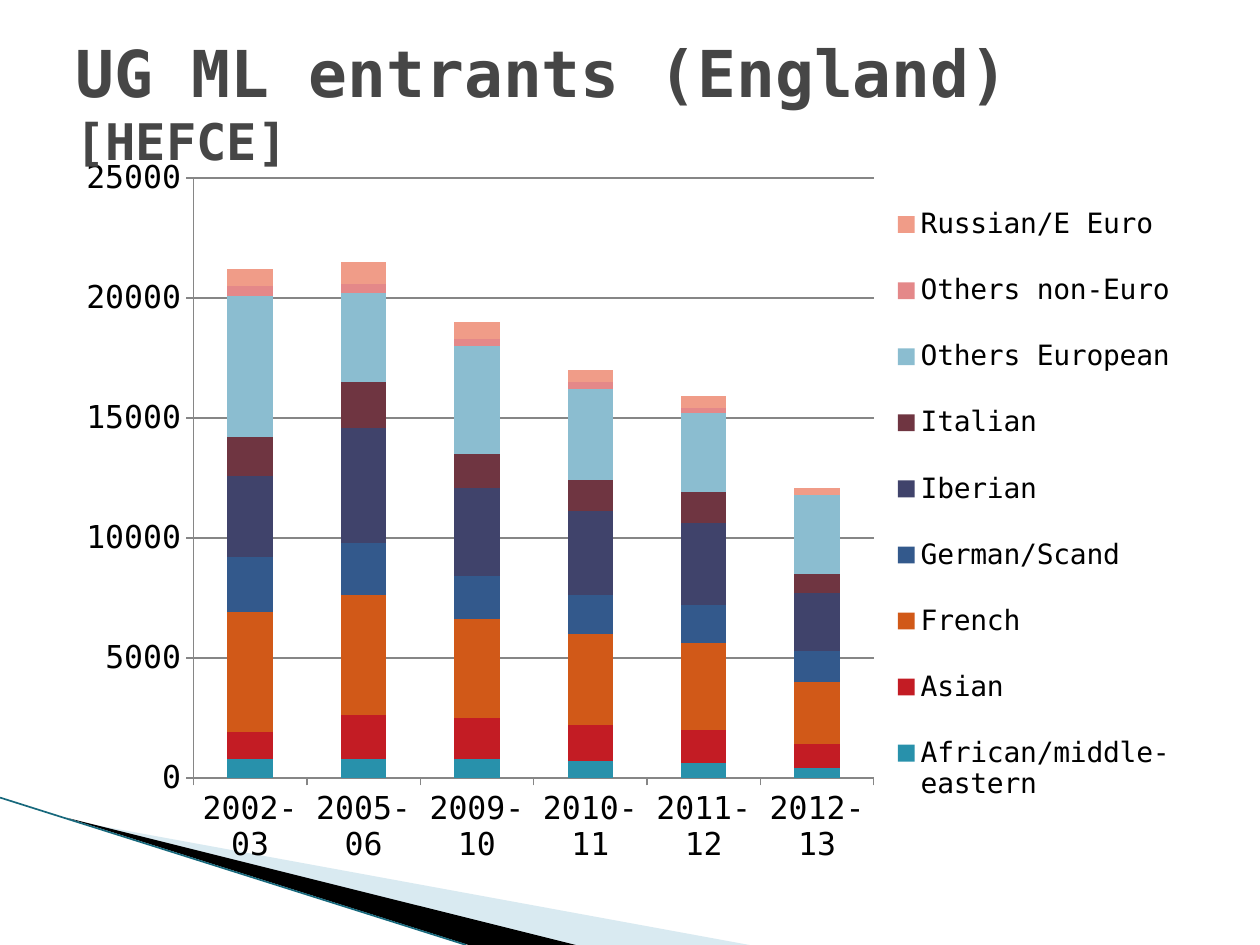
import lxml.etree
import pptx
import pptx.chart.data
import pptx.dml.color
import pptx.enum.chart
import pptx.enum.shapes
import pptx.enum.text
import pptx.oxml
import pptx.oxml.ns
import pptx.util

WIDTH, HEIGHT = 10, 7.5
FONT = "DejaVu Sans Mono"
COLOURS = {"title": "464646", "text": "000000", "grid": "868686",
           "pale": "A0CBDC", "black": "000000", "edge": "17687C"}
TITLE = [("UG ML entrants (England) ", 36.9), ("[HEFCE]", 28.8)]
YEARS = ["2002-03", "2005-06", "2009-10", "2010-11", "2011-12", "2012-13"]
SERIES = [
    ("African/middle-eastern", "2891AB", (800, 800, 800, 700, 600, 400)),
    ("Asian", "C31C24", (1100, 1800, 1700, 1500, 1400, 1000)),
    ("French", "D15918", (5000, 5000, 4100, 3800, 3600, 2600)),
    ("German/Scand", "33598C", (2300, 2200, 1800, 1600, 1600, 1300)),
    ("Iberian", "40436B", (3400, 4800, 3700, 3500, 3400, 2400)),
    ("Italian", "6F3541", (1600, 1900, 1400, 1300, 1300, 800)),
    ("Others European", "8BBDD0", (5900, 3700, 4500, 3800, 3300, 3300)),
    ("Others non-Euro", "E48889", (400, 400, 300, 300, 200, 0)),
    ("Russian/E Euro", "F09C88", (700, 900, 700, 500, 500, 300)),
]
# Swoosh in the lower left corner: outline, colour, opacity in percent
WEDGES = [
    ([(0.55, 6.51), (5.95, HEIGHT), (4.56, HEIGHT)], "pale", 40),
    ([(0.53, 6.49), (4.57, HEIGHT), (3.72, HEIGHT)], "black", 100),
]
EDGE = [(0, 6.33), (3.7, HEIGHT)]
# Shares of the chart frame: left, top, width, height
PLOT_AREA = (0.114, 0.045, 0.6, 0.817)
LEGEND_AREA = (0.71, 0.04, 0.29, 0.9)


def rgb(name):
    return pptx.dml.color.RGBColor.from_string(COLOURS.get(name, name))


def inches(*values):
    return [pptx.util.Inches(value) for value in values]


def add_wedge(slide, points, colour, opacity):
    builder = slide.shapes.build_freeform(*inches(*points[0]))
    builder.add_line_segments([inches(*point) for point in points[1:]], close=True)
    wedge = builder.convert_to_shape()
    wedge.shadow.inherit = False
    wedge.line.fill.background()
    wedge.fill.solid()
    wedge.fill.fore_color.rgb = rgb(colour)
    if opacity < 100:
        fill = wedge.fill._xPr.find(".//" + pptx.oxml.ns.qn("a:srgbClr"))
        alpha = lxml.etree.SubElement(fill, pptx.oxml.ns.qn("a:alpha"))
        alpha.set("val", str(opacity * 1000))


def add_edge(slide):
    edge = slide.shapes.add_connector(
        pptx.enum.shapes.MSO_CONNECTOR.STRAIGHT, *inches(*EDGE[0], *EDGE[1]))
    edge.line.color.rgb = rgb("edge")
    edge.line.width = pptx.util.Pt(0.95)
    lxml.etree.SubElement(edge._element.spPr, pptx.oxml.ns.qn("a:effectLst"))


def place(element, area, inner=False):
    """Give a plot area or legend a fixed position inside the chart."""
    namespace = pptx.oxml.ns.nsdecls("c")
    target = '<c:layoutTarget val="inner"/>' if inner else ""
    modes = '<c:xMode val="edge"/><c:yMode val="edge"/>'
    sizes = "".join(f'<c:{key} val="{value}"/>' for key, value in zip("xywh", area))
    layout = pptx.oxml.parse_xml(
        f"<c:layout {namespace}><c:manualLayout>{target}{modes}{sizes}"
        "</c:manualLayout></c:layout>")
    for old in element.findall(pptx.oxml.ns.qn("c:layout")):
        element.remove(old)
    before = element.find(pptx.oxml.ns.qn("c:legendPos"))
    element.insert(0 if before is None else element.index(before) + 1, layout)


def set_font(font, size, colour):
    font.name = FONT
    font.size = pptx.util.Pt(size)
    font.color.rgb = rgb(colour)


def add_entrants_chart(slide):
    data = pptx.chart.data.CategoryChartData()
    data.categories = YEARS
    for name, _, values in SERIES:
        data.add_series(name, values)
    chart = slide.shapes.add_chart(
        pptx.enum.chart.XL_CHART_TYPE.COLUMN_STACKED,
        *inches(0.51, 1.15, 9, 5.83), data).chart
    chart.has_title = False
    set_font(chart.font, 18, "text")

    plot = chart.plots[0]
    plot.gap_width, plot.overlap = 150, 100
    plot.vary_by_categories = False
    for series, (_, colour, _) in zip(plot.series, SERIES):
        series.format.fill.solid()
        series.format.fill.fore_color.rgb = rgb(colour)

    chart.value_axis.minimum_scale = 0
    chart.value_axis.maximum_scale = 25000
    chart.value_axis.major_unit = 5000
    chart.value_axis.has_major_gridlines = True
    for axis in (chart.category_axis, chart.value_axis):
        axis.major_tick_mark = pptx.enum.chart.XL_TICK_MARK.OUTSIDE
        axis.format.line.color.rgb = rgb("grid")
    chart.value_axis.major_gridlines.format.line.color.rgb = rgb("grid")

    chart.has_legend = True
    chart.legend.position = pptx.enum.chart.XL_LEGEND_POSITION.RIGHT
    chart.legend.include_in_layout = False
    set_font(chart.legend.font, 16, "text")
    place(chart._chartSpace.chart.plotArea, PLOT_AREA, inner=True)
    place(chart.legend._element, LEGEND_AREA)


def add_title(slide):
    frame = slide.shapes.add_textbox(*inches(0.5, 0.3, 9, 1.01)).text_frame
    frame.word_wrap = True
    frame.vertical_anchor = pptx.enum.text.MSO_ANCHOR.MIDDLE
    for text, size in TITLE:
        span = frame.paragraphs[0].add_run()
        span.text = text
        set_font(span.font, size, "title")
        span.font.bold = True


def main():
    deck = pptx.Presentation()
    deck.slide_width, deck.slide_height = inches(WIDTH, HEIGHT)
    slide = deck.slides.add_slide(deck.slide_layouts[6])
    for wedge in WEDGES:
        add_wedge(slide, *wedge)
    add_edge(slide)
    add_entrants_chart(slide)
    add_title(slide)
    deck.save("out.pptx")


if __name__ == "__main__":
    main()
